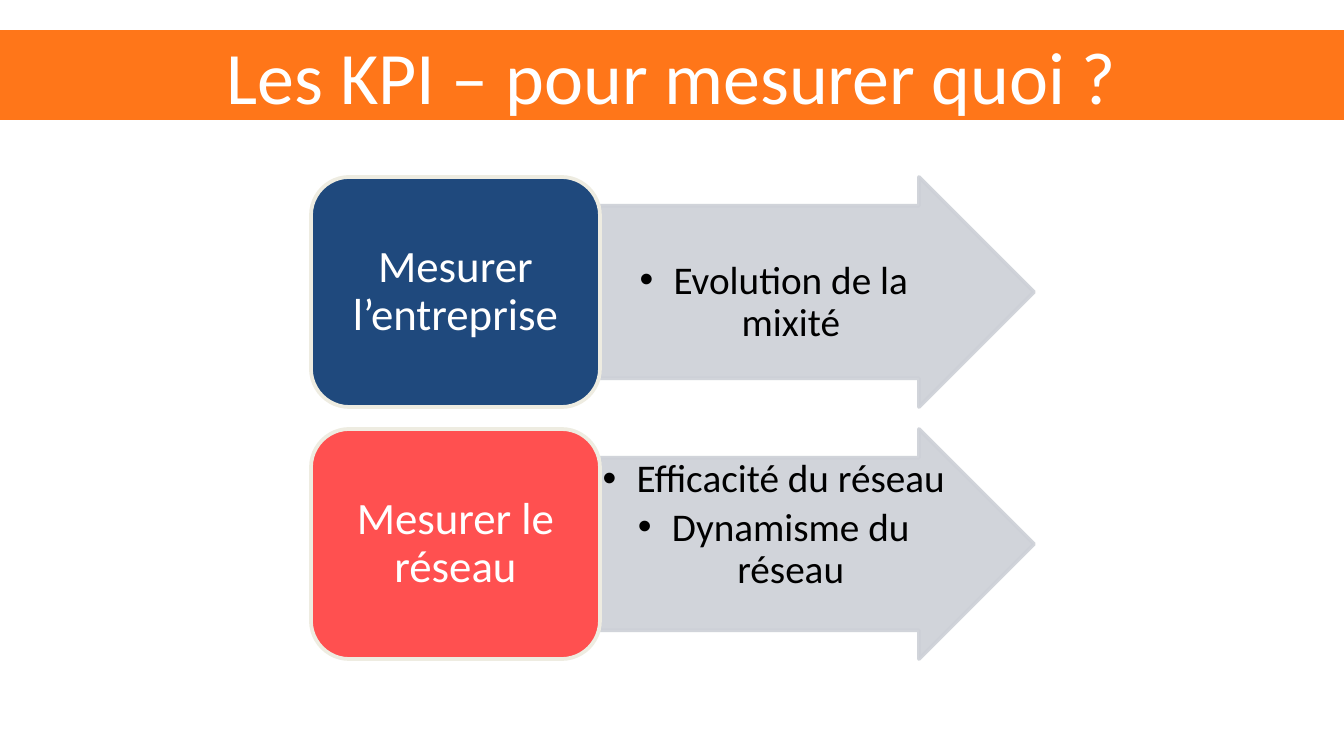
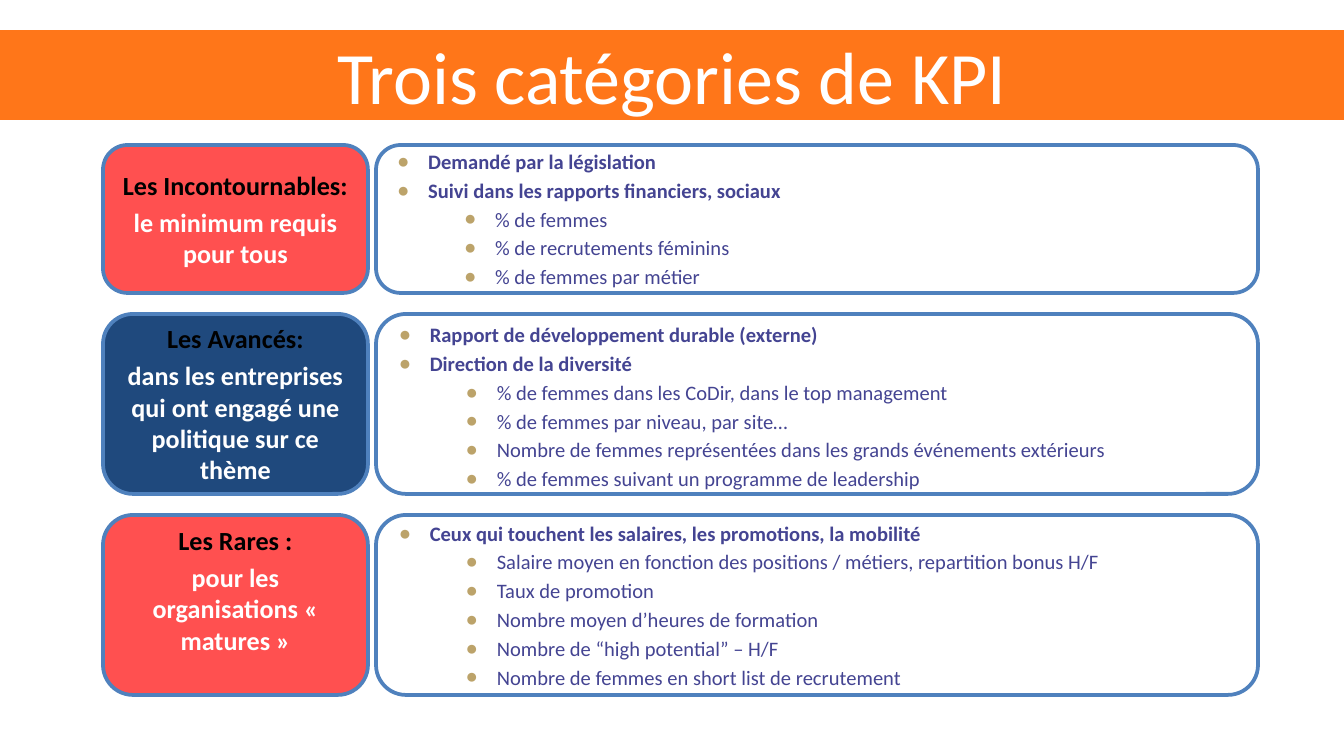
from dataclasses import dataclass

from lxml import etree
from pptx import Presentation
from pptx.dml.color import RGBColor
from pptx.enum.shapes import MSO_SHAPE
from pptx.enum.text import MSO_ANCHOR, MSO_AUTO_SIZE, PP_ALIGN
from pptx.oxml.ns import qn
from pptx.util import Pt

ROUNDED = MSO_SHAPE.ROUNDED_RECTANGLE
ARROW = MSO_SHAPE.RIGHT_ARROW
LEFT, CENTER = PP_ALIGN.LEFT, PP_ALIGN.CENTER
TOP, MIDDLE = MSO_ANCHOR.TOP, MSO_ANCHOR.MIDDLE
NO_AUTOFIT = MSO_AUTO_SIZE.NONE

EMU_PER_PX = 914400 / 134.4
FONT = "Calibri"
TITLE_ONLY = 5
COLORS = {
    "band": "FF7619", "navy": "1F497D", "red": "FF5050", "cream": "EEECE1",
    "arrow": "CDD0D7", "border": "4F81BD", "gold": "BCA36A", "violet": "444492",
    "white": "FFFFFF", "black": "000000",
}


@dataclass(frozen=True)
class Box:
    left: int
    top: int
    width: int
    height: int


@dataclass(frozen=True)
class Insets:
    left: int = 13
    top: int = 7
    right: int = 13
    bottom: int = 7


@dataclass(frozen=True)
class TextStyle:
    size: float
    color: str
    bold: bool = False
    align: PP_ALIGN = CENTER
    line_spacing: float | None = None
    before: float = 0
    after: float = 0
    bullet: str = ""
    bullet_color: str = ""
    margin: int = 0
    hanging: int = 0


@dataclass(frozen=True)
class Measure:
    subject: str
    color: str
    aspects: list[str]
    arrow_top_inset: int


@dataclass(frozen=True)
class Category:
    name: str
    audience: str
    color: str
    height: int
    sources: list[str]
    indicators: list[str]
    label_bottom_inset: int = 5
    panel_top_inset: int = 5


TITLE = TextStyle(39.6, "white")
SUBJECT = TextStyle(24, "white", line_spacing=0.9)
ASPECT = TextStyle(21, "black", line_spacing=0.9, after=3.5,
                   bullet="•", margin=34, hanging=34)
NAME = TextStyle(14, "black", bold=True)
AUDIENCE = TextStyle(14, "white", bold=True, before=3)
SOURCE = TextStyle(11, "violet", bold=True, align=LEFT, before=2.2,
                   bullet="●", bullet_color="gold", margin=40, hanging=31)
INDICATOR = TextStyle(11, "violet", align=LEFT, before=2.2,
                      bullet="●", bullet_color="gold", margin=107, hanging=31)

MEASURES = [
    Measure("Mesurer l’entreprise", "navy", ["Evolution de la mixité"], 55),
    Measure("Mesurer le réseau", "red",
            ["Efficacité du réseau", "Dynamisme du réseau"], 1),
]
CATEGORIES = [
    Category("Les Incontournables:", "le minimum requis pour tous", "red", 148,
             ["Demandé par la législation",
              "Suivi dans les rapports financiers, sociaux"],
             ["% de femmes", "% de recrutements féminins",
              "% de femmes par métier"]),
    Category("Les Avancés:",
             "dans les entreprises qui ont engagé une politique sur ce thème",
             "navy", 180,
             ["Rapport de développement durable (externe)",
              "Direction de la diversité"],
             ["% de femmes dans les CoDir, dans le top management",
              "% de femmes par niveau, par site…",
              "Nombre de femmes représentées dans les grands événements extérieurs",
              "% de femmes suivant un programme de leadership"],
             panel_top_inset=10),
    Category("Les Rares :", "pour les organisations « matures »", "red", 180,
             ["Ceux qui touchent les salaires, les promotions, la mobilité"],
             ["Salaire moyen en fonction des positions / métiers, repartition bonus H/F",
              "Taux de promotion",
              "Nombre moyen d’heures de formation",
              "Nombre de “high potential” – H/F",
              "Nombre de femmes en short list de recrutement"],
             label_bottom_inset=35),
]


def px(length: int) -> int:
    return round(length * EMU_PER_PX)


def rgb(name: str) -> RGBColor:
    return RGBColor.from_string(COLORS[name])


def add_bullet(paragraph, style: TextStyle) -> None:
    properties = paragraph._p.get_or_add_pPr()
    properties.set("marL", str(px(style.margin)))
    properties.set("indent", str(-px(style.hanging)))
    if style.bullet_color:
        color = etree.SubElement(properties, qn("a:buClr"))
        etree.SubElement(color, qn("a:srgbClr"), val=COLORS[style.bullet_color])
    etree.SubElement(properties, qn("a:buFont"), typeface="Arial")
    etree.SubElement(properties, qn("a:buChar"), char=style.bullet)


def write(shape, lines: list[tuple[str, TextStyle]], insets: Insets = Insets(),
          anchor: MSO_ANCHOR = MIDDLE) -> None:
    frame = shape.text_frame
    frame.word_wrap = True
    frame.auto_size = NO_AUTOFIT
    frame.vertical_anchor = anchor
    frame.margin_left, frame.margin_right = px(insets.left), px(insets.right)
    frame.margin_top, frame.margin_bottom = px(insets.top), px(insets.bottom)
    for index, (text, style) in enumerate(lines):
        paragraph = frame.add_paragraph() if index else frame.paragraphs[0]
        paragraph.text = text
        if style.bullet:
            add_bullet(paragraph, style)
        paragraph.alignment = style.align
        paragraph.line_spacing = style.line_spacing
        paragraph.space_before = Pt(style.before if index else 0)
        paragraph.space_after = Pt(style.after)
        paragraph.font.name = FONT
        paragraph.font.size = Pt(style.size)
        paragraph.font.bold = style.bold
        paragraph.font.color.rgb = rgb(style.color)


def add_block(slide, kind: MSO_SHAPE, box: Box, fill: str | None, line: str):
    shape = slide.shapes.add_shape(
        kind, px(box.left), px(box.top), px(box.width), px(box.height))
    shape.shadow.inherit = False
    if fill:
        shape.fill.solid()
        shape.fill.fore_color.rgb = rgb(fill)
    else:
        shape.fill.background()
    shape.line.color.rgb = rgb(line)
    shape.line.width = Pt(2)
    return shape


def set_opacity(shape, percent: int) -> None:
    """Apply one opacity to both the fill and the outline."""
    for color in shape._element.spPr.iter(qn("a:srgbClr")):
        etree.SubElement(color, qn("a:alpha"), val=str(percent * 1000))


def add_titled_slide(deck, heading: str):
    slide = deck.slides.add_slide(deck.slide_layouts[TITLE_ONLY])
    band = slide.shapes.title
    band.left, band.top, band.width, band.height = px(0), px(30), px(1344), px(90)
    band.fill.solid()
    band.fill.fore_color.rgb = rgb("band")
    write(band, [(heading, TITLE)])
    return slide


def add_measure(slide, measure: Measure, top: int) -> None:
    arrow = add_block(slide, ARROW, Box(600, top, 434, 230), "arrow", "arrow")
    arrow.adjustments[0] = 0.75
    set_opacity(arrow, 90)
    write(arrow, [(aspect, ASPECT) for aspect in measure.aspects],
          Insets(1, measure.arrow_top_inset, 1, 1), TOP)
    subject = add_block(slide, ROUNDED, Box(311, top, 289, 230),
                        measure.color, "cream")
    write(subject, [(measure.subject, SUBJECT)])


def add_category(slide, category: Category, top: int) -> None:
    label = add_block(slide, ROUNDED, Box(103, top, 265, category.height),
                      category.color, "border")
    write(label, [(category.name, NAME), (category.audience, AUDIENCE)],
          Insets(8, 5, 8, category.label_bottom_inset))
    panel = add_block(slide, ROUNDED, Box(376, top, 882, category.height),
                      None, "border")
    write(panel, [(source, SOURCE) for source in category.sources]
          + [(indicator, INDICATOR) for indicator in category.indicators],
          Insets(5, category.panel_top_inset, 5, 5))


def main() -> None:
    deck = Presentation()
    deck.slide_width, deck.slide_height = px(1344), px(756)

    purpose = add_titled_slide(deck, "Les KPI – pour mesurer quoi ?")
    for row, measure in enumerate(MEASURES):
        add_measure(purpose, measure, 177 + 252 * row)

    overview = add_titled_slide(deck, "Trois catégories de KPI")
    top = 145
    for category in CATEGORIES:
        add_category(overview, category, top)
        top += category.height + 21

    deck.save("out.pptx")


if __name__ == "__main__":
    main()
